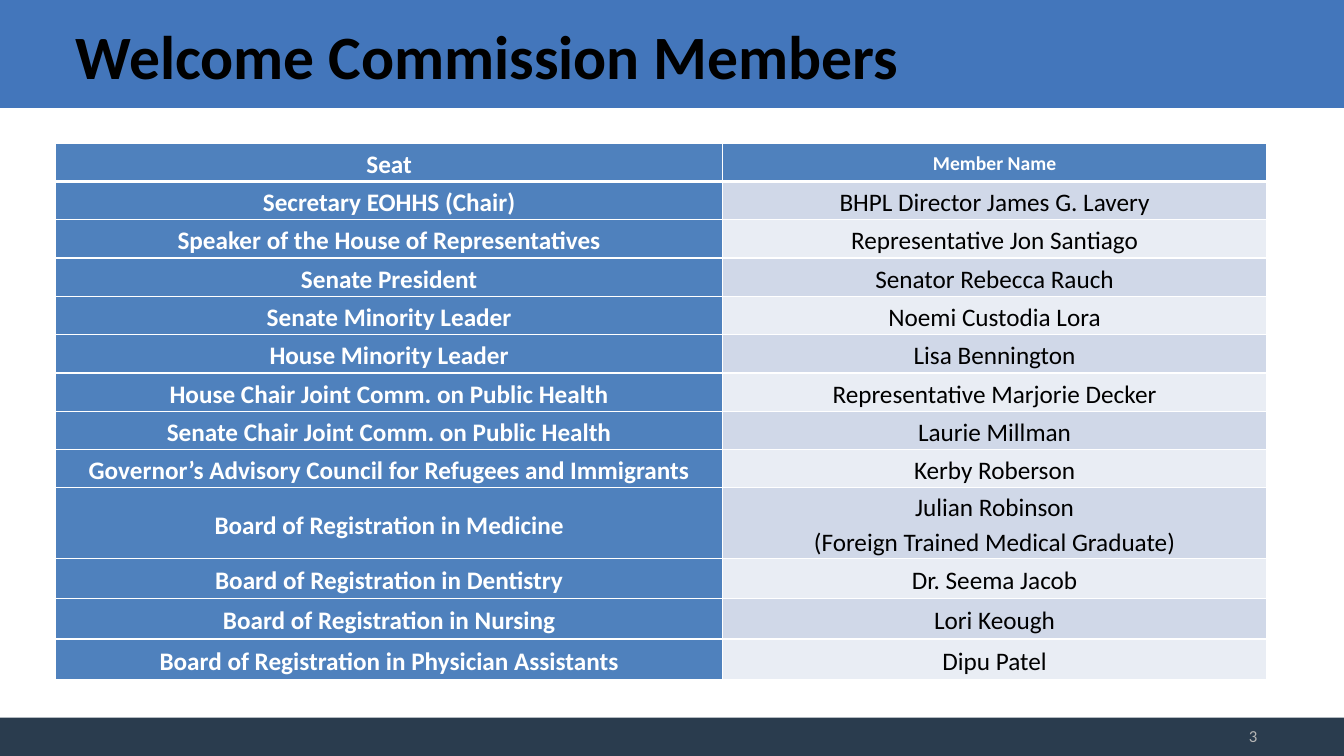
from dataclasses import dataclass

from lxml import etree
from pptx import Presentation
from pptx import util as u
from pptx.dml.color import RGBColor
from pptx.enum import shapes, text
from pptx.oxml.ns import qn

EMU_PER_PX = 9144
SLIDE_WIDTH, SLIDE_HEIGHT = 1333, 750


@dataclass(frozen=True)
class Theme:
    """Colours, font and type sizes of the slide."""
    font: str = "Calibri"
    title_band: str = "4376BB"
    footer_band: str = "2A3C4E"
    seat_fill: str = "4F81BD"
    odd_fill: str = "D0D8E8"
    even_fill: str = "E9EDF4"
    light: str = "FFFFFF"
    dark: str = "000000"
    muted: str = "B5B5B5"
    title_size: int = 44
    body_size: int = 18
    name_header_size: int = 14
    number_size: int = 12


THEME = Theme()

MEMBERS = [
    ("Seat", "Member Name"),
    ("Secretary EOHHS (Chair)", "BHPL Director James G. Lavery"),
    ("Speaker of the House of Representatives", "Representative Jon Santiago"),
    ("Senate President", "Senator Rebecca Rauch"),
    ("Senate Minority Leader", "Noemi Custodia Lora"),
    ("House Minority Leader", "Lisa Bennington"),
    ("House Chair Joint Comm. on Public Health", "Representative Marjorie Decker"),
    ("Senate Chair Joint Comm. on Public Health", "Laurie Millman"),
    ("Governor’s Advisory Council for Refugees and Immigrants", "Kerby Roberson"),
    ("Board of Registration in Medicine",
     "Julian Robinson\n(Foreign Trained Medical Graduate)"),
    ("Board of Registration in Dentistry", "Dr. Seema Jacob"),
    ("Board of Registration in Nursing", "Lori Keough"),
    ("Board of Registration in Physician Assistants", "Dipu Patel"),
]
COLUMN_WIDTHS = (662, 539)
ROW_HEIGHTS = [38] * 9 + [70] + [40] * 3


def px(length):
    """Turn px into EMU."""
    return u.Emu(length * EMU_PER_PX)


def write(text_frame, words, size, color, bold, alignment, line_spacing=1.0):
    """Fill a text frame with evenly formatted paragraphs."""
    text_frame.text = words
    for paragraph in text_frame.paragraphs:
        paragraph.alignment = alignment
        paragraph.line_spacing = line_spacing
        for run in paragraph.runs:
            run.font.name = THEME.font
            run.font.size = u.Pt(size)
            run.font.bold = bold
            run.font.color.rgb = RGBColor.from_string(color)


def add_band(slide, box, color):
    """Draw a plain filled rectangle."""
    band = slide.shapes.add_shape(shapes.MSO_SHAPE.RECTANGLE, *map(px, box))
    band.shadow.inherit = False
    band.fill.solid()
    band.fill.fore_color.rgb = RGBColor.from_string(color)
    band.line.fill.background()


def add_label(slide, box, words, size, color, bold, alignment):
    """Place a wrapped, vertically centred line of text."""
    text_frame = slide.shapes.add_textbox(*map(px, box)).text_frame
    text_frame.word_wrap = True
    text_frame.vertical_anchor = text.MSO_ANCHOR.MIDDLE
    write(text_frame, words, size, color, bold, alignment)


def add_header(slide, box):
    """Build the title band and its title."""
    left, top, width, height = box
    add_band(slide, box, THEME.title_band)
    add_label(slide, (left + 65, top + 6, width - 133, height - 11),
              "Welcome Commission Members", THEME.title_size, THEME.dark, True,
              text.PP_ALIGN.LEFT)


def add_footer(slide, box):
    """Build the bottom band and the slide number."""
    left, top, width, height = box
    add_band(slide, box, THEME.footer_band)
    add_label(slide, (left + width - 375, top - 2, 299, height + 2), "3",
              THEME.number_size, THEME.muted, False, text.PP_ALIGN.RIGHT)


def set_borders(cell, top, bottom):
    """Give a cell white borders with the given top and bottom widths."""
    properties = cell._tc.get_or_add_tcPr()
    for side, points in (("lnL", 1), ("lnR", 1), ("lnT", top), ("lnB", bottom)):
        line = etree.SubElement(properties, qn("a:" + side), w=str(u.Pt(points)))
        fill = etree.SubElement(line, qn("a:solidFill"))
        etree.SubElement(fill, qn("a:srgbClr"), val=THEME.light)


def style_cell(cell, words, row, column):
    """Write and colour one table cell according to its place."""
    is_strong = row == 0 or column == 0
    band_fill = THEME.odd_fill if row % 2 else THEME.even_fill
    size = THEME.name_header_size if (row, column) == (0, 1) else THEME.body_size
    set_borders(cell, 3 if row == 1 else 1, 3 if row == 0 else 1)
    cell.fill.solid()
    cell.fill.fore_color.rgb = RGBColor.from_string(
        THEME.seat_fill if is_strong else band_fill)
    cell.margin_left = cell.margin_right = px(7)
    cell.margin_top = cell.margin_bottom = 0
    cell.vertical_anchor = text.MSO_ANCHOR.MIDDLE
    write(cell.text_frame, words, size, THEME.light if is_strong else THEME.dark,
          is_strong, text.PP_ALIGN.CENTER, 1.15)


def add_member_table(slide, box):
    """Build the table of seats and members."""
    table = slide.shapes.add_table(
        len(MEMBERS), len(COLUMN_WIDTHS), *map(px, box)).table
    for column, width in zip(table.columns, COLUMN_WIDTHS):
        column.width = px(width)
    for row, height in zip(table.rows, ROW_HEIGHTS):
        row.height = px(height)
    for row, entries in enumerate(MEMBERS):
        for column, words in enumerate(entries):
            style_cell(table.cell(row, column), words, row, column)


def main():
    """Build and save the presentation."""
    presentation = Presentation()
    presentation.slide_width = px(SLIDE_WIDTH)
    presentation.slide_height = px(SLIDE_HEIGHT)
    slide = presentation.slides.add_slide(presentation.slide_layouts[6])
    add_header(slide, (0, 0, SLIDE_WIDTH, 107))
    add_footer(slide, (0, 712, SLIDE_WIDTH, 38))
    add_member_table(slide, (55, 142, sum(COLUMN_WIDTHS), sum(ROW_HEIGHTS)))
    presentation.save("out.pptx")


if __name__ == "__main__":
    main()
